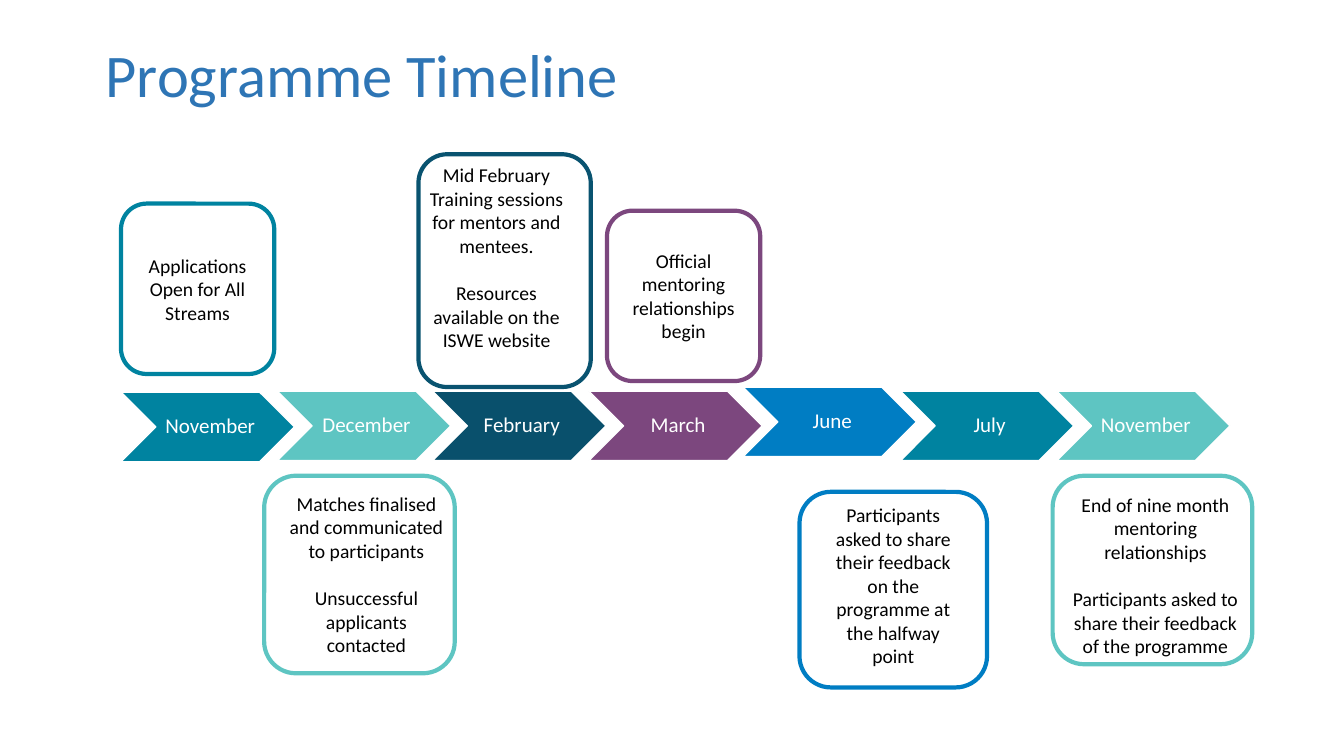
from dataclasses import dataclass
from typing import Optional

from pptx import Presentation, util as u
from pptx.dml.color import RGBColor
from pptx.enum import shapes, text

SCALE = 9144  # EMU in one px, 100 px to the inch
Box = tuple[int, int, int, int]  # left, top, width, height in px


@dataclass(frozen=True)
class Theme:
    font: str = "Calibri"
    title: str = "2E75B5"
    ink: str = "000000"
    white: str = "FFFFFF"
    teal: str = "0083A0"
    aqua: str = "5EC5C2"
    navy: str = "09506C"
    navy_line: str = "095370"
    purple: str = "7C477E"
    blue: str = "007DC3"
    title_pt: float = 43.2
    month_pt: float = 15
    note_pt: float = 14
    note_gap_pt: float = 17


@dataclass(frozen=True)
class Month:
    name: str
    colour: str
    dx: int = 0
    dy: int = 0


@dataclass(frozen=True)
class Note:
    frame: Box
    colour: str
    lines: tuple[str, ...]
    text_box: Optional[Box] = None  # None: text sits centred in the frame


T = Theme()

MONTHS = [
    Month("November", T.teal, dy=1),
    Month("December", T.aqua),
    Month("February", T.navy),
    Month("March", T.purple),
    Month("June", T.blue, dx=-2, dy=-4),
    Month("July", T.teal),
    Month("November", T.aqua),
]
ROW_LEFT, ROW_TOP, ROW_SPAN = 120, 388, 928
CHEVRON_W, CHEVRON_H = 172, 69

NOTES = [
    Note((120, 202, 152, 169), T.teal, ("Applications Open for All Streams",)),
    Note((262, 472, 189, 196), T.aqua,
         ("Matches finalised and communicated to participants",
          "Unsuccessful applicants contacted"), (272, 483, 183, 212)),
    Note((415, 153, 171, 231), T.navy_line,
         ("Mid February Training sessions for mentors and mentees.",
          "Resources available on the ISWE website"), (407, 157, 171, 199)),
    Note((602, 209, 152, 169), T.purple,
         ("Official mentoring relationships begin",)),
    Note((793, 488, 186, 194), T.blue,
         ("Participants asked to share their feedback on the programme "
          "at the halfway point",), (815, 494, 142, 175)),
    Note((1044, 472, 198, 187), T.aqua,
         ("End of nine month mentoring relationships",
          "Participants asked to share their feedback of the programme"),
         (1050, 484, 192, 175)),
]


def px(n: int) -> u.Emu:
    return u.Emu(n * SCALE)


def emu(box: Box) -> list[u.Emu]:
    return [px(n) for n in box]


def write(tf, lines: tuple[str, ...], size: float, colour: str,
          align=text.PP_ALIGN.CENTER, anchor=text.MSO_ANCHOR.MIDDLE,
          spacing: float = 1.0, gap: float = 0) -> None:
    tf.text = "\n".join(lines)
    tf.word_wrap = True
    tf.vertical_anchor = anchor
    for i, p in enumerate(tf.paragraphs):
        p.alignment = align
        p.line_spacing = spacing
        if i:
            p.space_before = u.Pt(gap)
        for r in p.runs:
            r.font.name = T.font
            r.font.size = u.Pt(size)
            r.font.color.rgb = RGBColor.from_string(colour)


def add_outlined(s, kind, box: Box, line: str, width: float, adjust: float):
    sp = s.shapes.add_shape(kind, *emu(box))
    sp.shadow.inherit = False
    sp.adjustments[0] = adjust
    sp.fill.background()
    sp.line.color.rgb = RGBColor.from_string(line)
    sp.line.width = u.Pt(width)
    return sp


def add_title(s, title: str) -> None:
    tf = s.shapes.add_textbox(*emu((95, 38, 1150, 79))).text_frame
    write(tf, (title,), T.title_pt, T.title, text.PP_ALIGN.LEFT, spacing=0.9)


def add_month(s, index: int, month: Month) -> None:
    left = ROW_LEFT + round(index * ROW_SPAN / (len(MONTHS) - 1)) + month.dx
    box = (left, ROW_TOP + month.dy, CHEVRON_W, CHEVRON_H)
    sp = add_outlined(s, shapes.MSO_SHAPE.CHEVRON, box, T.white, 1, 0.5)
    sp.fill.solid()
    sp.fill.fore_color.rgb = RGBColor.from_string(month.colour)
    tf = sp.text_frame
    tf.margin_left = px(7)
    tf.margin_right = tf.margin_top = tf.margin_bottom = px(2)
    write(tf, (month.name,), T.month_pt, T.white, spacing=0.9)


def add_note(s, note: Note) -> None:
    sp = add_outlined(s, shapes.MSO_SHAPE.ROUNDED_RECTANGLE, note.frame,
                      note.colour, 3, 0.167)
    anchor = text.MSO_ANCHOR.MIDDLE
    if note.text_box:
        sp = s.shapes.add_textbox(*emu(note.text_box))
        anchor = text.MSO_ANCHOR.TOP
    write(sp.text_frame, note.lines, T.note_pt, T.ink, anchor=anchor,
          gap=T.note_gap_pt)


def main() -> None:
    prs = Presentation()
    prs.slide_width, prs.slide_height = px(1333), px(750)
    s = prs.slides.add_slide(prs.slide_layouts[6])

    # Heading
    add_title(s, "Programme Timeline")

    # Row of months
    for i, month in enumerate(MONTHS):
        add_month(s, i, month)

    # Notes above and below the row
    for note in NOTES:
        add_note(s, note)

    prs.save("out.pptx")


if __name__ == "__main__":
    main()
